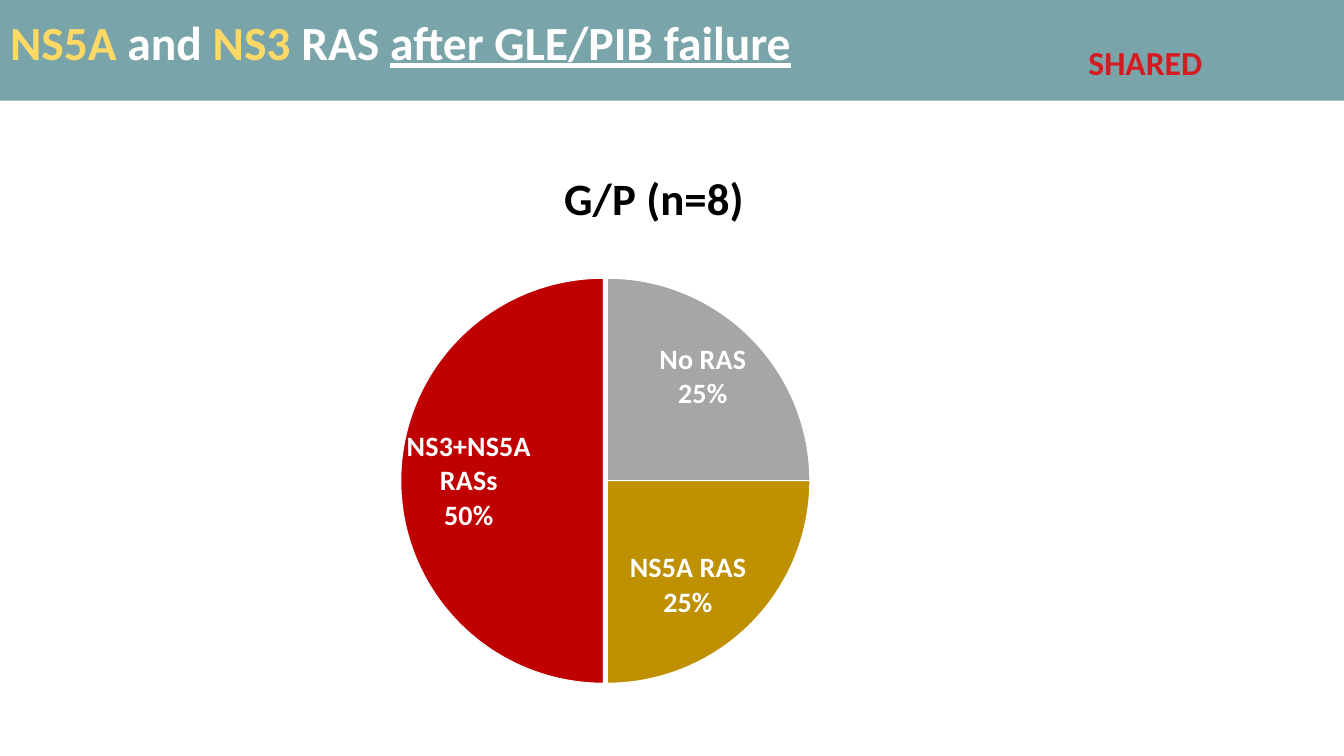
from dataclasses import dataclass

from lxml import etree
from pptx import Presentation
from pptx.chart.data import CategoryChartData
from pptx.dml.color import RGBColor
from pptx.enum.chart import XL_CHART_TYPE, XL_LABEL_POSITION as LabelPosition
from pptx.enum.shapes import MSO_SHAPE
from pptx.enum.text import MSO_ANCHOR, MSO_AUTO_SIZE, PP_ALIGN
from pptx.oxml import parse_xml
from pptx.oxml.ns import nsdecls, qn
from pptx.util import Cm, Pt


@dataclass(frozen=True)
class Theme:
    font: str = "Calibri"
    band: str = "79A4AA"
    white: str = "FFFFFF"
    black: str = "000000"
    highlight: str = "FFD966"
    shared: str = "D71A20"
    title_size: int = 34
    tag_size: int = 24
    chart_title_size: int = 32
    label_size: int = 20


THEME = Theme()
SLICES = [
    ("No RAS", 25, "A6A6A6"),
    ("NS5A RAS", 25, "BF9000"),
    ("NS3+NS5A RASs", 50, "C00000"),
]


def format_font(font, size, color, bold=True, underline=None):
    font.name = THEME.font
    font.size = Pt(size)
    font.bold = bold
    font.underline = underline
    font.color.rgb = RGBColor.from_string(color)


def add_text(paragraph, text, **font_format):
    run = paragraph.add_run()
    run.text = text
    format_font(run.font, **font_format)


def add_band(slide, width):
    band = slide.shapes.add_shape(MSO_SHAPE.RECTANGLE, 0, 0, width, Cm(2.54))
    band.shadow.inherit = False
    band.fill.solid()
    band.fill.fore_color.rgb = RGBColor.from_string(THEME.band)
    band.line.fill.background()


def add_tag(slide, text):
    tag = slide.shapes.add_textbox(Cm(27.18), Cm(0.94), Cm(4.6), Cm(1.37))
    tag.text_frame.word_wrap = True
    add_text(tag.text_frame.paragraphs[0], text, size=THEME.tag_size, color=THEME.shared)


def fill_title(slide, parts):
    """Place the title above the band and write its (text, color, underline) parts."""
    title = slide.shapes.title
    slide.shapes._spTree.append(title._element)
    title.left, title.top, title.width, title.height = Cm(0), Cm(0.36), Cm(26.54), Cm(3.68)
    frame = title.text_frame
    frame.word_wrap = True
    frame.auto_size = MSO_AUTO_SIZE.NONE
    frame.vertical_anchor = MSO_ANCHOR.TOP
    paragraph = frame.paragraphs[0]
    paragraph.alignment = PP_ALIGN.LEFT
    paragraph.line_spacing = 0.9
    for text, color, underline in parts:
        add_text(paragraph, text, size=THEME.title_size, color=color, underline=underline)


def set_plot_layout(chart, **fractions):
    """Fix the inner plot area, in fractions of the chart's size."""
    plot_area = chart._chartSpace.chart.plotArea
    for old_layout in plot_area.findall(qn("c:layout")):
        plot_area.remove(old_layout)
    layout = parse_xml(
        f'<c:layout {nsdecls("c")}><c:manualLayout><c:layoutTarget val="inner"/>'
        '<c:xMode val="edge"/><c:yMode val="edge"/></c:manualLayout></c:layout>'
    )
    for name, value in fractions.items():
        etree.SubElement(layout[0], qn(f"c:{name}")).set("val", str(value))
    plot_area.insert(0, layout)


def explode(point_index, series, percent):
    point = series._element.findall(qn("c:dPt"))[point_index]
    for old_explosion in point.findall(qn("c:explosion")):
        point.remove(old_explosion)
    explosion = etree.Element(qn("c:explosion"))
    explosion.set("val", str(percent))
    point.find(qn("c:spPr")).addprevious(explosion)


def format_labels(plot):
    plot.has_data_labels = True
    labels = plot.data_labels
    labels.show_category_name = True
    labels.show_percentage = True
    labels.show_value = False
    labels.position = LabelPosition.INSIDE_END
    format_font(labels.font, THEME.label_size, THEME.white)
    separator = etree.Element(qn("c:separator"))
    separator.text = "\n"
    labels._element.find(qn("c:showBubbleSize")).addnext(separator)


def add_pie(slide, title, slices):
    chart_data = CategoryChartData()
    chart_data.categories = [name for name, _, _ in slices]
    chart_data.add_series("Series 1", [value for _, value, _ in slices])
    chart = slide.shapes.add_chart(
        XL_CHART_TYPE.PIE, Cm(5.26), Cm(3.56), Cm(22.45), Cm(15.01), chart_data
    ).chart
    format_font(chart.font, 18, THEME.black, bold=False)
    chart.has_legend = False
    chart.has_title = True
    add_text(chart.chart_title.text_frame.paragraphs[0], title,
             size=THEME.chart_title_size, color=THEME.black)
    plot = chart.plots[0]
    plot.vary_by_categories = True
    series = plot.series[0]
    for index, (_, _, color) in enumerate(slices):
        point_format = series.points[index].format
        point_format.fill.solid()
        point_format.fill.fore_color.rgb = RGBColor.from_string(color)
        point_format.line.color.rgb = RGBColor.from_string(THEME.white)
        point_format.line.width = Pt(0.75)
    explode(len(slices) - 1, series, 2)
    format_labels(plot)
    set_plot_layout(chart, x=0.22, y=0.23, w=0.455, h=0.68)


def main():
    presentation = Presentation()
    presentation.slide_width = Cm(33.87)
    presentation.slide_height = Cm(19.05)
    slide = presentation.slides.add_slide(presentation.slide_layouts[5])
    add_band(slide, presentation.slide_width)
    add_tag(slide, "SHARED")
    add_pie(slide, "G/P (n=8)", SLICES)
    fill_title(slide, [
        ("NS5A ", THEME.highlight, None),
        ("and ", THEME.white, None),
        ("NS3 ", THEME.highlight, None),
        ("RAS ", THEME.white, None),
        ("after GLE/PIB failure", THEME.white, True),
    ])
    presentation.save("out.pptx")


if __name__ == "__main__":
    main()
